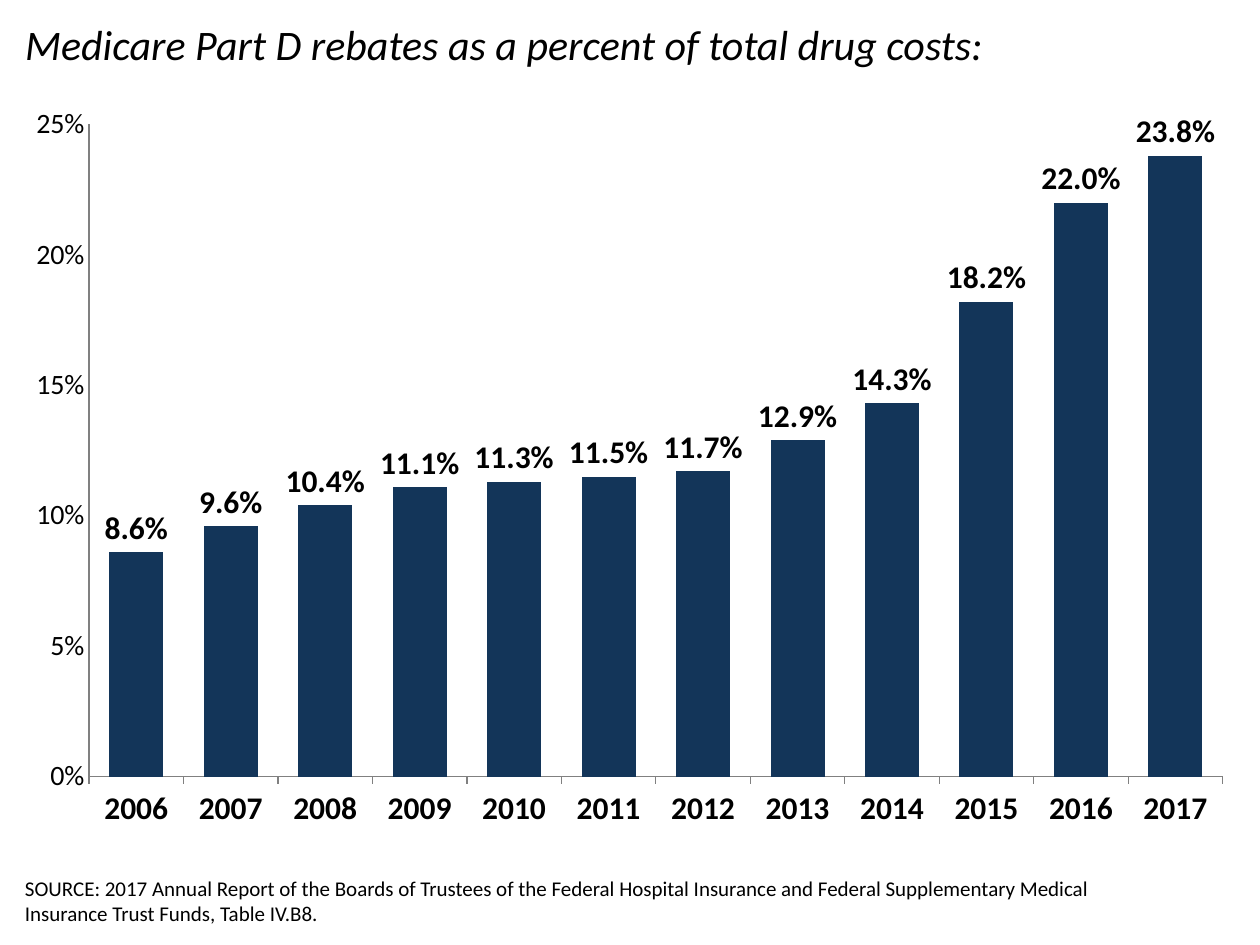
"""Build a slide charting Medicare Part D rebates by year."""
from lxml import etree
from pptx import Presentation
from pptx.chart.data import CategoryChartData
from pptx.dml.color import RGBColor
from pptx.enum.chart import XL_CHART_TYPE, XL_LABEL_POSITION, XL_TICK_MARK
from pptx.enum.text import MSO_ANCHOR, PP_ALIGN
from pptx.oxml.ns import qn
from pptx.util import Inches, Pt

COLUMN = XL_CHART_TYPE.COLUMN_CLUSTERED
OUT_END = XL_LABEL_POSITION.OUTSIDE_END
TICK_OUT, TICK_NONE = XL_TICK_MARK.OUTSIDE, XL_TICK_MARK.NONE
TOP, BOTTOM, LEFT = MSO_ANCHOR.TOP, MSO_ANCHOR.BOTTOM, PP_ALIGN.LEFT

BLACK = RGBColor(0x00, 0x00, 0x00)
GRAY = RGBColor(0x80, 0x80, 0x80)
NAVY = RGBColor(0x13, 0x35, 0x59)
FACE = "Calibri"

TITLE = "Medicare Part D rebates as a percent of total drug costs:"
SOURCE = ("SOURCE: 2017 Annual Report of the Boards of Trustees of the Federal "
          "Hospital Insurance and Federal Supplementary Medical Insurance Trust "
          "Funds, Table IV.B8.")
YEARS = [str(year) for year in range(2006, 2018)]
RATES = [0.086, 0.096, 0.104, 0.111, 0.113, 0.115,
         0.117, 0.129, 0.143, 0.182, 0.22, 0.238]
PLOT = {"x": 0.06, "y": 0.04, "w": 0.92, "h": 0.87}


def style(font, size, bold=False, italic=False):
    font.name, font.size = FACE, Pt(size)
    font.bold, font.italic = bold, italic
    font.color.rgb = BLACK


def place(shape, left, top, width, height):
    shape.left, shape.top = Inches(left), Inches(top)
    shape.width, shape.height = Inches(width), Inches(height)


def write(shape, text, anchor, size, italic=False):
    frame = shape.text_frame
    frame.text = text
    frame.word_wrap = True
    frame.vertical_anchor = anchor
    para = frame.paragraphs[0]
    para.alignment = LEFT
    style(para.runs[0].font, size, italic=italic)


def set_axis(axis, size, tick, bold=False):
    axis.has_major_gridlines = False
    axis.major_tick_mark, axis.minor_tick_mark = tick, TICK_NONE
    axis.format.line.color.rgb = GRAY
    axis.format.line.width = Pt(0.75)
    style(axis.tick_labels.font, size, bold)


def set_plot(chart):
    area = chart._chartSpace.chart.plotArea
    for old in area.findall(qn("c:layout")):
        area.remove(old)
    layout = etree.Element(qn("c:layout"))
    area.insert(0, layout)
    manual = etree.SubElement(layout, qn("c:manualLayout"))
    parts = {"layoutTarget": "inner", "xMode": "edge", "yMode": "edge", **PLOT}
    for name, value in parts.items():
        etree.SubElement(manual, qn(f"c:{name}")).set("val", str(value))


def add_bars(slide):
    data = CategoryChartData(number_format="0.0%")
    data.categories = YEARS
    data.add_series("Series 1", RATES)
    box = [Inches(n) for n in (0.12, 0.75, 9.78, 5.95)]
    chart = slide.shapes.add_chart(COLUMN, *box, data).chart
    chart.has_legend = chart.has_title = False
    style(chart.font, 10)
    set_plot(chart)

    set_axis(chart.category_axis, 18, TICK_OUT, bold=True)
    axis = chart.value_axis
    set_axis(axis, 16, TICK_NONE)
    axis.minimum_scale, axis.maximum_scale, axis.major_unit = 0, 0.25, 0.05
    axis.tick_labels.number_format = "0%"
    axis.tick_labels.number_format_is_linked = False

    plot = chart.plots[0]
    plot.gap_width, plot.overlap = 75, -27
    plot.vary_by_categories = False
    bars = plot.series[0]
    bars.format.fill.solid()
    bars.format.fill.fore_color.rgb = NAVY
    labels = bars.data_labels
    labels.show_value = True
    labels.position = OUT_END
    labels.number_format = "0.0%"
    labels.number_format_is_linked = False
    style(labels.font, 18, bold=True)


def main():
    deck = Presentation()
    deck.slide_width, deck.slide_height = Inches(10), Inches(7.5)
    slide = deck.slides.add_slide(deck.slide_layouts[5])
    add_bars(slide)
    note = slide.shapes.add_textbox(0, 0, 0, 0)
    place(note, 0.1, 6.8, 9.1, 0.6)
    write(note, SOURCE, BOTTOM, 12)
    title = slide.shapes.title
    place(title, 0.1, 0.1, 9.8, 1)
    write(title, TITLE, TOP, 24, italic=True)
    deck.save("out.pptx")


if __name__ == "__main__":
    main()
